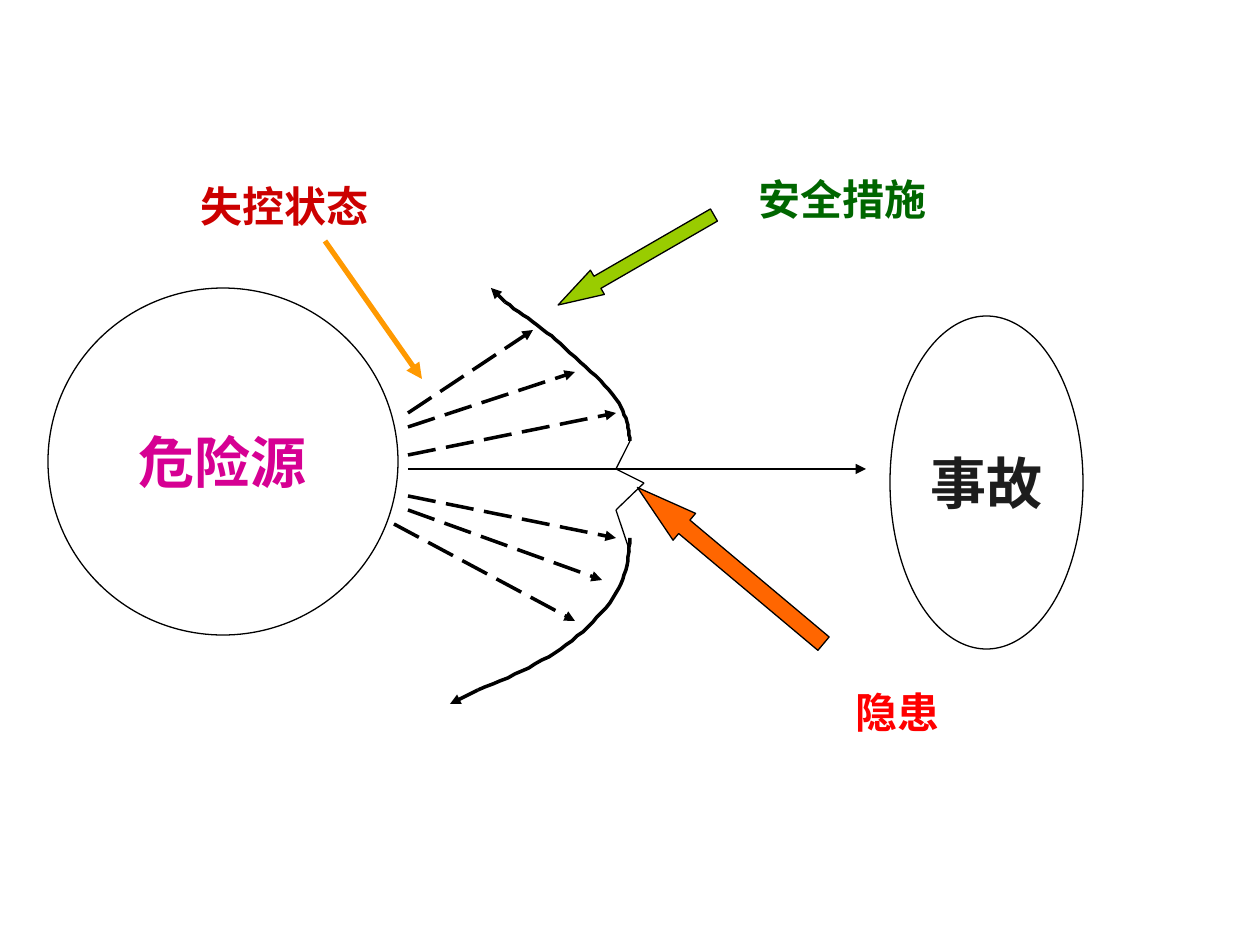
"""Draws how a hazard source leads to an accident through gaps in the safety measures."""
from itertools import pairwise

from lxml import etree
from pptx import Presentation
from pptx import util as u
from pptx.dml.color import RGBColor
from pptx.enum import dml, shapes, text
from pptx.oxml.ns import qn

PX = u.Inches(1) / 126
FONT = "Noto Sans CJK SC"
BLACK = RGBColor(0x00, 0x00, 0x00)
WHITE = RGBColor(0xFF, 0xFF, 0xFF)
MAGENTA = RGBColor(0xD6, 0x00, 0x93)
CHARCOAL = RGBColor(0x1D, 0x1D, 0x1D)
LIME = RGBColor(0x99, 0xCC, 0x00)
GREEN = RGBColor(0x00, 0x66, 0x00)
ORANGE = RGBColor(0xFF, 0x66, 0x00)
AMBER = RGBColor(0xFF, 0x99, 0x00)
RED = RGBColor(0xFF, 0x00, 0x00)
DARK_RED = RGBColor(0xCC, 0x00, 0x00)

ESCAPES = [
    ((408, 413), (533, 330)), ((408, 427), (575, 372)), ((408, 455), (616, 413)),
    ((408, 496), (616, 538)), ((408, 510), (602, 580)), ((394, 524), (575, 621)),
]
BARRIERS = [
    ([(630, 538), (629, 557), (627, 575), (616, 593), (605, 612),
      (583, 633), (561, 649), (537, 665), (508, 678), (478, 690)], (450, 704)),
    ([(630, 441), (629, 428), (627, 416), (616, 399), (605, 383),
      (578, 360), (561, 344), (542, 328), (523, 315), (505, 302)], (491, 288)),
]
CRACK = [(630, 441), (616, 469), (644, 483), (616, 510), (630, 552)]


def emu(*lengths):
    """Turn px into EMU."""
    return [round(n * PX) for n in lengths]


def write(sp, words, size=24, color=BLACK, wrap=True):
    """Put one centred bold line of text into a shape."""
    tf = sp.text_frame
    tf.word_wrap = wrap
    tf.vertical_anchor = text.MSO_ANCHOR.MIDDLE
    tf.margin_left = tf.margin_right = u.Inches(0.08)
    tf.margin_top = tf.margin_bottom = u.Inches(0.04)
    p = tf.paragraphs[0]
    p.alignment = text.PP_ALIGN.CENTER
    r = p.add_run()
    r.text = words
    r.font.size, r.font.bold, r.font.name = u.Pt(size), True, FONT
    r.font.color.rgb = color
    etree.SubElement(r.font._element, qn("a:ea"), typeface=FONT)


def bezier(points, steps=12):
    """Sample a chain of cubic curves."""
    path_points = [points[0]]
    for i in range(0, len(points) - 1, 3):
        for k in range(1, steps + 1):
            t = k / steps
            weights = ((1 - t) ** 3, 3 * t * (1 - t) ** 2, 3 * t * t * (1 - t), t ** 3)
            path_points.append(tuple(
                sum(w * pt[axis] for w, pt in zip(weights, points[i:i + 4]))
                for axis in (0, 1)))
    return path_points


class Diagram:
    """Holds the slide and draws each kind of element on it."""

    def __init__(self, s):
        self.s = s

    def outline(self, sp, color=BLACK, width=0.75):
        sp.line.color.rgb = color
        sp.line.width = u.Pt(width)

    def shape(self, kind, box, fill, rotation=0):
        sp = self.s.shapes.add_shape(kind, *emu(*box))
        sp.shadow.inherit = False
        sp.fill.solid()
        sp.fill.fore_color.rgb = fill
        sp.rotation = rotation
        self.outline(sp)
        return sp

    def ellipse(self, box, words, color):
        sp = self.shape(shapes.MSO_SHAPE.OVAL, box, WHITE)
        write(sp, words, size=32, color=color, wrap=False)

    def block_arrow(self, box, fill, rotation, head):
        sp = self.shape(shapes.MSO_SHAPE.UP_ARROW, box, fill, rotation)
        sp.adjustments[0], sp.adjustments[1] = 0.5, head

    def label(self, box, words, color):
        write(self.s.shapes.add_textbox(*emu(*box)), words, color=color)

    def line(self, start, end, color=BLACK, width=0.75, arrow=False, dashed=False):
        sp = self.s.shapes.add_connector(
            shapes.MSO_CONNECTOR.STRAIGHT, *emu(*start, *end))
        self.outline(sp, color, width)
        if dashed:
            sp.line.dash_style = dml.MSO_LINE.LONG_DASH
        if arrow:
            etree.SubElement(sp.line._get_or_add_ln(), qn("a:tailEnd"), type="triangle")
        etree.SubElement(sp._element.spPr, qn("a:effectLst"))

    def curve(self, points):
        first, *rest = bezier(points)
        builder = self.s.shapes.build_freeform(*first, scale=PX)
        builder.add_line_segments(rest, close=False)
        sp = builder.convert_to_shape()
        sp.shadow.inherit = False
        sp.fill.background()
        self.outline(sp, width=2)


def main():
    """Build the slide and save it."""
    prs = Presentation()
    prs.slide_width, prs.slide_height = u.Inches(10), u.Inches(7.5)
    d = Diagram(prs.slides.add_slide(prs.slide_layouts[6]))
    d.ellipse((48, 288, 350, 347), "危险源", MAGENTA)
    d.ellipse((890, 316, 193, 333), "事故", CHARCOAL)
    d.line((408, 469), (866, 469), arrow=True)
    for start, end in ESCAPES:
        d.line(start, end, width=2, arrow=True, dashed=True)
    d.block_arrow((622, 170, 28, 180), LIME, rotation=240, head=1.625)
    d.label((741, 150, 204, 97), "安全措施", GREEN)
    d.block_arrow((713, 444, 35, 243), ORANGE, rotation=310, head=1.75)
    d.label((828, 677, 139, 69), "隐患", RED)
    for points, tip in BARRIERS:
        d.curve(points)
        d.line(points[-1], tip, width=2, arrow=True)
    for start, end in pairwise(CRACK):
        d.line(start, end)
    d.line((325, 241), (422, 379), color=AMBER, width=3, arrow=True)
    d.label((147, 171, 275, 69), "失控状态", DARK_RED)
    prs.save("out.pptx")


if __name__ == "__main__":
    main()
